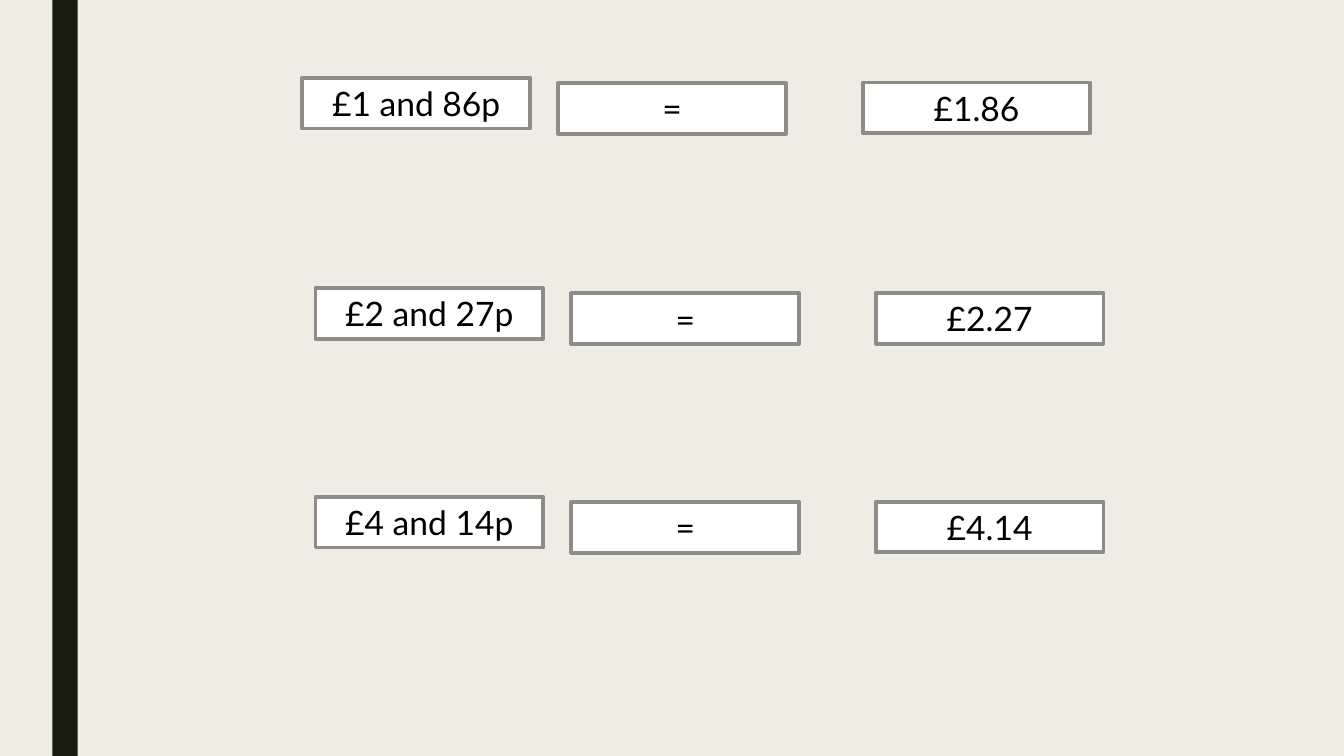
"""Build a slide matching pounds and pence with decimal money notation."""
from pptx import Presentation
from pptx.dml.color import RGBColor
from pptx.enum.shapes import MSO_SHAPE
from pptx.enum.text import MSO_ANCHOR, MSO_AUTO_SIZE, PP_ALIGN
from pptx.util import Cm, Pt

CREAM = RGBColor(0xEF, 0xED, 0xE3)
DARK_OLIVE = RGBColor(0x19, 0x1B, 0x0E)
GREY = RGBColor(0x8C, 0x8D, 0x86)
WHITE = RGBColor(0xFF, 0xFF, 0xFF)
BLACK = RGBColor(0x00, 0x00, 0x00)

BOX_WIDTH, BOX_HEIGHT = 5.74, 1.28
BOX_OFFSETS = [(0, 0), (6.45, 0.13), (14.12, 0.12)]
EQUATIONS = [
    (7.62, 1.96, "£1 and 86p", "£1.86"),
    (7.95, 7.26, "£2 and 27p", "£2.27"),
    (7.95, 12.52, "£4 and 14p", "£4.14"),
]


def add_rectangle(left, top, width, height, fill):
    rectangle = slide.shapes.add_shape(
        MSO_SHAPE.RECTANGLE, Cm(left), Cm(top), Cm(width), Cm(height))
    rectangle.shadow.inherit = False
    rectangle.fill.solid()
    rectangle.fill.fore_color.rgb = fill
    return rectangle


presentation = Presentation()
presentation.slide_width = Cm(33.87)
presentation.slide_height = Cm(19.05)
slide = presentation.slides.add_slide(presentation.slide_layouts[6])
slide.background.fill.solid()
slide.background.fill.fore_color.rgb = CREAM

side_stripe = add_rectangle(1.32, 0, 0.64, 19.05, DARK_OLIVE)
side_stripe.line.fill.background()

for left, top, pounds_and_pence, decimal_amount in EQUATIONS:
    terms = (pounds_and_pence, "=", decimal_amount)
    for (shift, drop), term in zip(BOX_OFFSETS, terms):
        term_box = add_rectangle(
            left + shift, top + drop, BOX_WIDTH, BOX_HEIGHT, WHITE)
        term_box.line.color.rgb = GREY
        term_box.line.width = Pt(2.75)
        frame = term_box.text_frame
        frame.text = term
        frame.word_wrap = True
        frame.auto_size = MSO_AUTO_SIZE.SHAPE_TO_FIT_TEXT
        frame.vertical_anchor = MSO_ANCHOR.MIDDLE
        paragraph = frame.paragraphs[0]
        paragraph.alignment = PP_ALIGN.CENTER
        font = paragraph.runs[0].font
        font.name = "Lato"
        font.size = Pt(24)
        font.color.rgb = BLACK

presentation.save("out.pptx")
